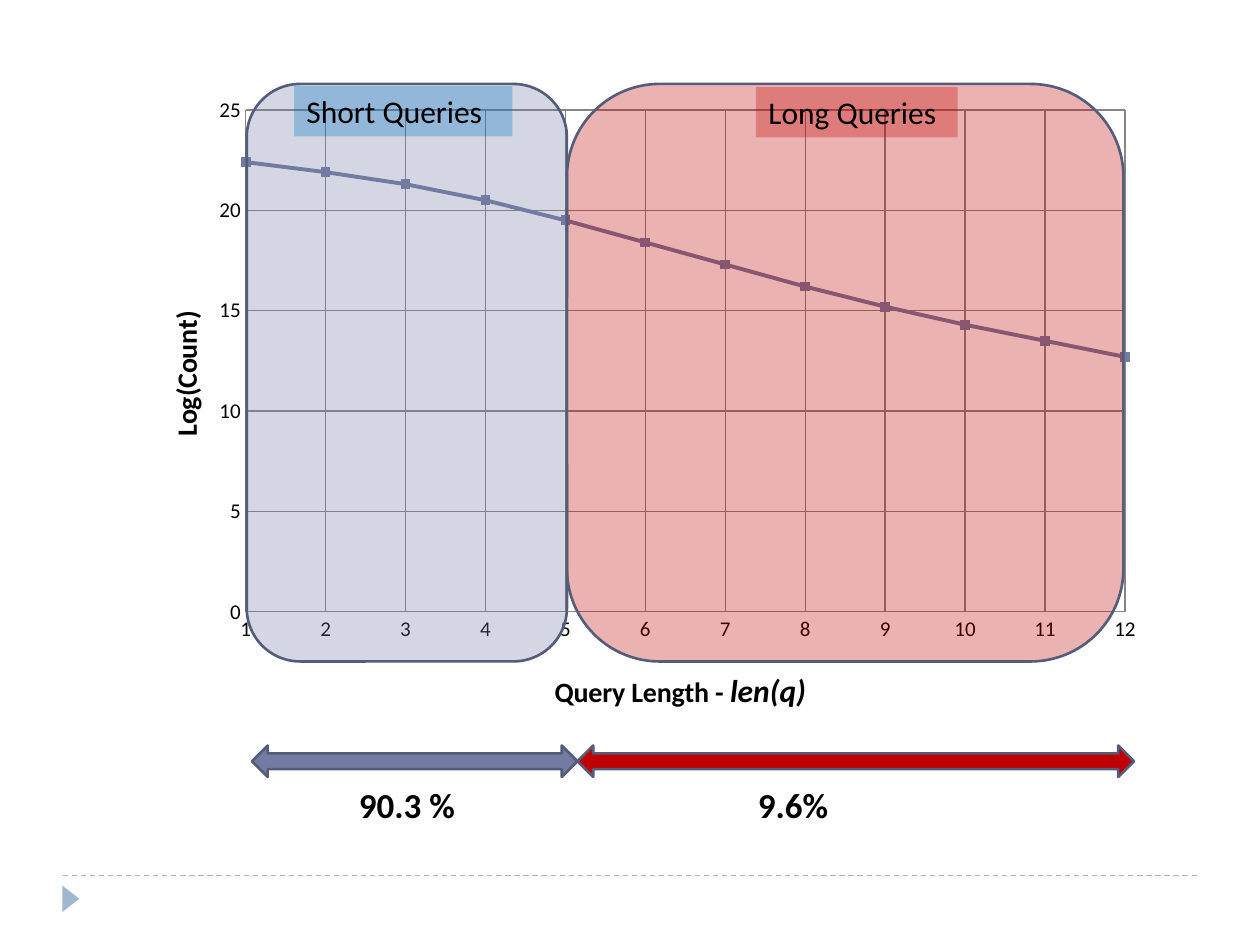
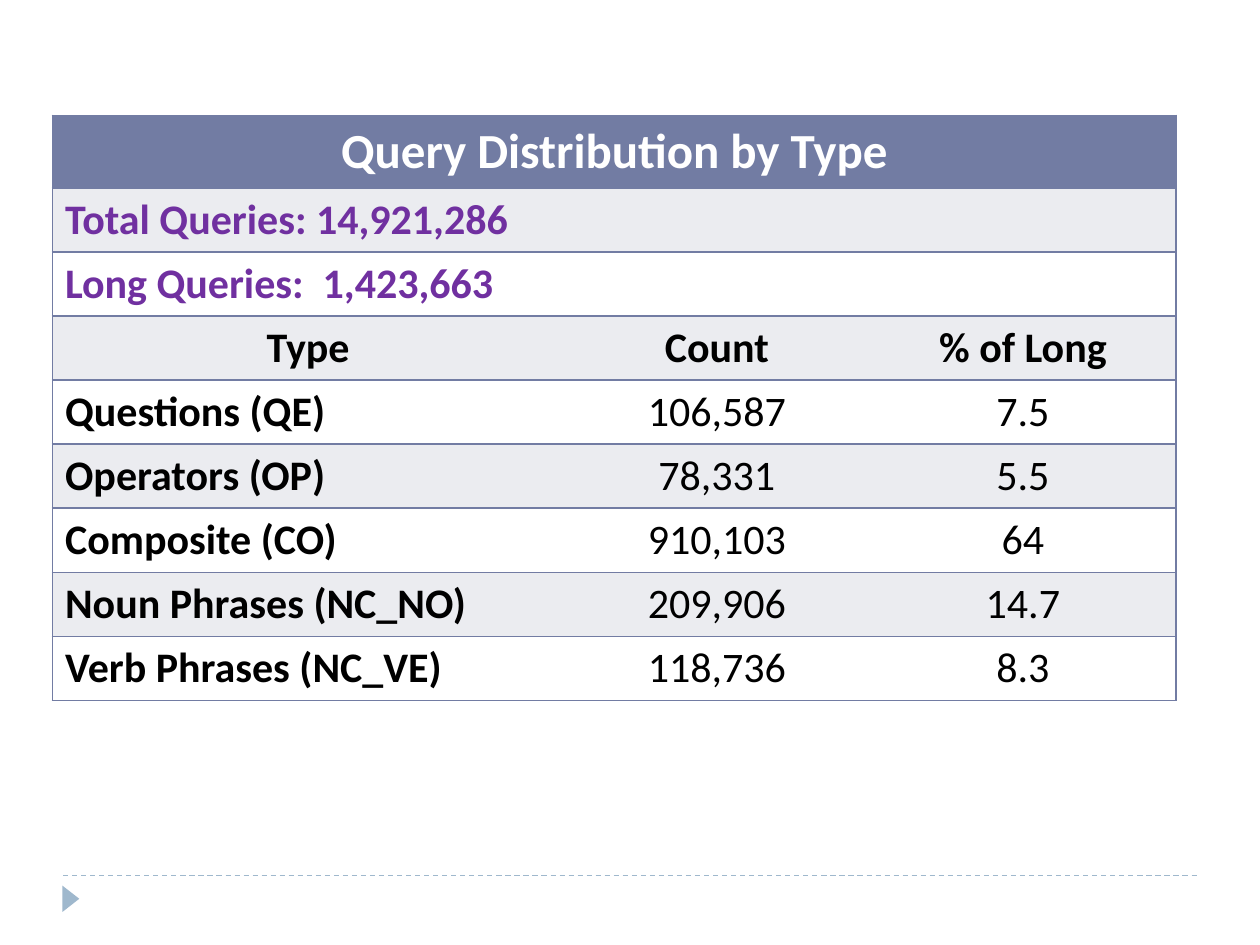
from lxml import etree
from pptx import Presentation
from pptx.chart.data import XyChartData
from pptx.dml.color import RGBColor
from pptx.enum.chart import XL_CHART_TYPE, XL_MARKER_STYLE, XL_TICK_MARK
from pptx.enum.dml import MSO_LINE
from pptx.enum.shapes import MSO_CONNECTOR, MSO_SHAPE
from pptx.enum.text import MSO_ANCHOR, PP_ALIGN
from pptx.oxml import parse_xml
from pptx.oxml.ns import nsdecls, qn
from pptx.util import Inches, Pt

FONT = "Calibri"
BLACK = RGBColor(0x00, 0x00, 0x00)
WHITE = RGBColor(0xFF, 0xFF, 0xFF)
SLATE = RGBColor(0x72, 0x7C, 0xA3)
DARK_SLATE = RGBColor(0x54, 0x5C, 0x79)
SKY = RGBColor(0x9F, 0xB8, 0xCD)
RED = RGBColor(0xC0, 0x00, 0x00)
BLUE = RGBColor(0x00, 0x70, 0xC0)
PURPLE = RGBColor(0x70, 0x30, 0xA0)
BAND = RGBColor(0xEB, 0xEC, 0xF0)
GRID_GREY = RGBColor(0x86, 0x86, 0x86)

RECT, ROUND = MSO_SHAPE.RECTANGLE, MSO_SHAPE.ROUNDED_RECTANGLE
ARROW, TRIANGLE = MSO_SHAPE.LEFT_RIGHT_ARROW, MSO_SHAPE.ISOSCELES_TRIANGLE
LEFT, CENTER, TOP = PP_ALIGN.LEFT, PP_ALIGN.CENTER, MSO_ANCHOR.TOP
SCATTER, SQUARE = XL_CHART_TYPE.XY_SCATTER_LINES, XL_MARKER_STYLE.SQUARE
NO_TICK, DASH, STRAIGHT = XL_TICK_MARK.NONE, MSO_LINE.DASH, MSO_CONNECTOR.STRAIGHT

prs = Presentation()
prs.slide_width, prs.slide_height = Inches(10), Inches(7.5)

# Grid of 120 columns by 90 rows
COL, ROW = prs.slide_width / 120, prs.slide_height / 90


def add_box(s, kind, at, fill=None, alpha=None, line=None, text="", size=18, bold=False):
    """Place a shape at (column, row, columns, rows), with optional text."""
    x, y, w, h = at
    sp = s.shapes.add_shape(kind, int(x * COL), int(y * ROW), int(w * COL), int(h * ROW))
    sp.shadow.inherit = False
    if fill is None:
        sp.fill.background()
    else:
        sp.fill.solid()
        sp.fill.fore_color.rgb = fill
    if alpha:
        color = sp._element.spPr.find(qn("a:solidFill"))[0]
        etree.SubElement(color, qn("a:alpha")).set("val", str(alpha * 1000))
    if line is None:
        sp.line.fill.background()
    else:
        sp.line.color.rgb = line
        sp.line.width = Pt(1.5)
    if text:
        tf = sp.text_frame
        tf.text = text
        tf.word_wrap = True
        tf.vertical_anchor = TOP
        p = tf.paragraphs[0]
        p.alignment = LEFT
        font = p.runs[0].font
        font.name, font.size, font.bold = FONT, Pt(size), bold
        font.color.rgb = BLACK
    return sp


def set_layout(parent, index, **shares):
    """Fix a chart part at the given shares of the chart's size."""
    old = parent.find(qn("c:layout"))
    if old is not None:
        parent.remove(old)
    target = '<c:layoutTarget val="inner"/>' if "w" in shares else ""
    modes = "".join(f'<c:{k}Mode val="edge"/>' for k in "xy")
    values = "".join(f'<c:{k} val="{v}"/>' for k, v in shares.items())
    parent.insert(index, parse_xml(
        f'<c:layout {nsdecls("c")}><c:manualLayout>{target}{modes}{values}'
        '</c:manualLayout></c:layout>'))


# Slides and their shared footer, which is moved to the layout
layout = prs.slide_layouts[6]
chart_slide, table_slide = [prs.slides.add_slide(layout) for _ in range(2)]
rule = chart_slide.shapes.add_connector(
    STRAIGHT, int(6 * COL), int(83.4 * ROW), int(114 * COL), int(83.4 * ROW))
rule.line.color.rgb = SKY
rule.line.width = Pt(0.75)
rule.line.dash_style = DASH
etree.SubElement(rule._element.spPr, qn("a:effectLst"))
marker = add_box(chart_slide, TRIANGLE, (5.5, 84.8, 2.5, 1.6), SKY)
marker.rotation = 90
for part in (rule, marker):
    layout.shapes._spTree.append(part._element)

# Slide 1: chart of query counts by length
s = chart_slide
log_counts = [22.4, 21.9, 21.3, 20.5, 19.5, 18.4, 17.3, 16.2, 15.2, 14.3, 13.5, 12.7]
data = XyChartData()
points = data.add_series("Series 1")
for length, count in enumerate(log_counts, 1):
    points.add_data_point(length, count)
chart = s.shapes.add_chart(
    SCATTER, int(8 * COL), int(9 * ROW), int(102 * COL), int(64 * ROW), data).chart
chart.has_legend = chart.has_title = False
chart.font.name, chart.font.size = FONT, Pt(10)
chart.font.color.rgb = BLACK
set_layout(chart._chartSpace.chart.plotArea, 0, x=0.151, y=0.023, w=0.821, h=0.747)

plot = chart.plots[0]
plot.vary_by_categories = False
series = plot.series[0]
series.smooth = False
series.format.line.color.rgb = SLATE
series.format.line.width = Pt(2.25)
series.marker.style, series.marker.size = SQUARE, 5
series.marker.format.fill.solid()
series.marker.format.fill.fore_color.rgb = SLATE
series.marker.format.line.color.rgb = SLATE

# Axes: range, step, title runs (text, size, italic) and title position
axes = [
    (chart.category_axis, 1, 12, 1,
     [("Query Length - ", 16, False), ("len(q)", 18, True)], (0.436, 0.85)),
    (chart.value_axis, 0, 25, 5, [("Log(Count)", 16, False)], (0.073, 0.315)),
]
for axis, low, high, step, title_runs, (x, y) in axes:
    axis.minimum_scale, axis.maximum_scale, axis.major_unit = low, high, step
    axis.major_tick_mark = axis.minor_tick_mark = NO_TICK
    axis.tick_labels.font.size = Pt(12)
    axis.has_major_gridlines = True
    for line in (axis.major_gridlines.format.line, axis.format.line):
        line.color.rgb = GRID_GREY
        line.width = Pt(0.75)
    p = axis.axis_title.text_frame.paragraphs[0]
    for text, size, italic in title_runs:
        r = p.add_run()
        r.text = text
        r.font.name, r.font.size = FONT, Pt(size)
        r.font.bold, r.font.italic = True, italic
        r.font.color.rgb = BLACK
    set_layout(axis.axis_title._element, 1, x=x, y=y)

# Query ranges, their labels, arrows and shares
for x, w, color in [(23.5, 30.5, SLATE), (54, 53, RED)]:
    add_box(s, ROUND, (x, 8, w, 55), color, 30, DARK_SLATE)
add_box(s, RECT, (28, 8.2, 20.8, 4.8), BLUE, 30, text="Short Queries")
add_box(s, RECT, (72, 8.3, 19.2, 4.8), RED, 30, text="Long Queries")
for x, w, color in [(24, 31, SLATE), (55, 53, RED)]:
    add_box(s, ARROW, (x, 71, w, 3), color, line=DARK_SLATE)
for x, w, share in [(33, 12.2, "90.3 %"), (71, 9.5, "9.6%")]:
    tb = s.shapes.add_textbox(int(x * COL), int(74 * ROW), int(w * COL), int(5.3 * ROW))
    tf = tb.text_frame
    tf.text = share
    tf.word_wrap = True
    font = tf.paragraphs[0].runs[0].font
    font.name, font.size, font.bold = FONT, Pt(20), True
    font.color.rgb = BLACK

# Slide 2: table of query types
rows = [
    ["Query Distribution by Type"],
    ["Total Queries: 14,921,286"],
    ["Long Queries:  1,423,663"],
    ["Type", "Count", "% of Long"],
    ["Questions (QE)", "106,587", "7.5"],
    ["Operators (OP)", "78,331", "5.5"],
    ["Composite (CO)", "910,103", "64"],
    ["Noun Phrases (NC_NO)", "209,906", "14.7"],
    ["Verb Phrases (NC_VE)", "118,736", "8.3"],
]
widths = [48.7, 29.15, 29.15]
HEADER_ROW = 3
table = table_slide.shapes.add_table(
    len(rows), len(widths), int(5 * COL), int(11 * ROW),
    int(sum(widths) * COL), int(6.1 * ROW * len(rows))).table
for column, width in zip(table.columns, widths):
    column.width = int(width * COL)

for i, texts in enumerate(rows):
    if len(texts) == 1:
        table.cell(i, 0).merge(table.cell(i, 2))
    for j, text in enumerate(texts):
        cell = table.cell(i, j)
        cell.text = text

        # Borders: no line between columns
        tcPr = cell._tc.get_or_add_tcPr()
        visible = {"L": j == 0, "R": j == len(texts) - 1, "T": True, "B": True}
        for side, shown in visible.items():
            paint = (f'<a:solidFill><a:srgbClr val="{SLATE}"/></a:solidFill>'
                     if shown else "<a:noFill/>")
            tcPr.append(parse_xml(
                f'<a:ln{side} {nsdecls("a")} w="{Pt(1)}">{paint}</a:ln{side}>'))
        cell.fill.solid()
        cell.fill.fore_color.rgb = SLATE if i == 0 else BAND if i % 2 else WHITE

        p = cell.text_frame.paragraphs[0]
        p.alignment = CENTER if i in (0, HEADER_ROW) or j > 0 else LEFT
        font = p.runs[0].font
        font.name, font.size = FONT, Pt(28 if i == 0 else 24)
        font.bold = i <= HEADER_ROW or j == 0
        font.color.rgb = WHITE if i == 0 else PURPLE if i < HEADER_ROW else BLACK

prs.save("out.pptx")
